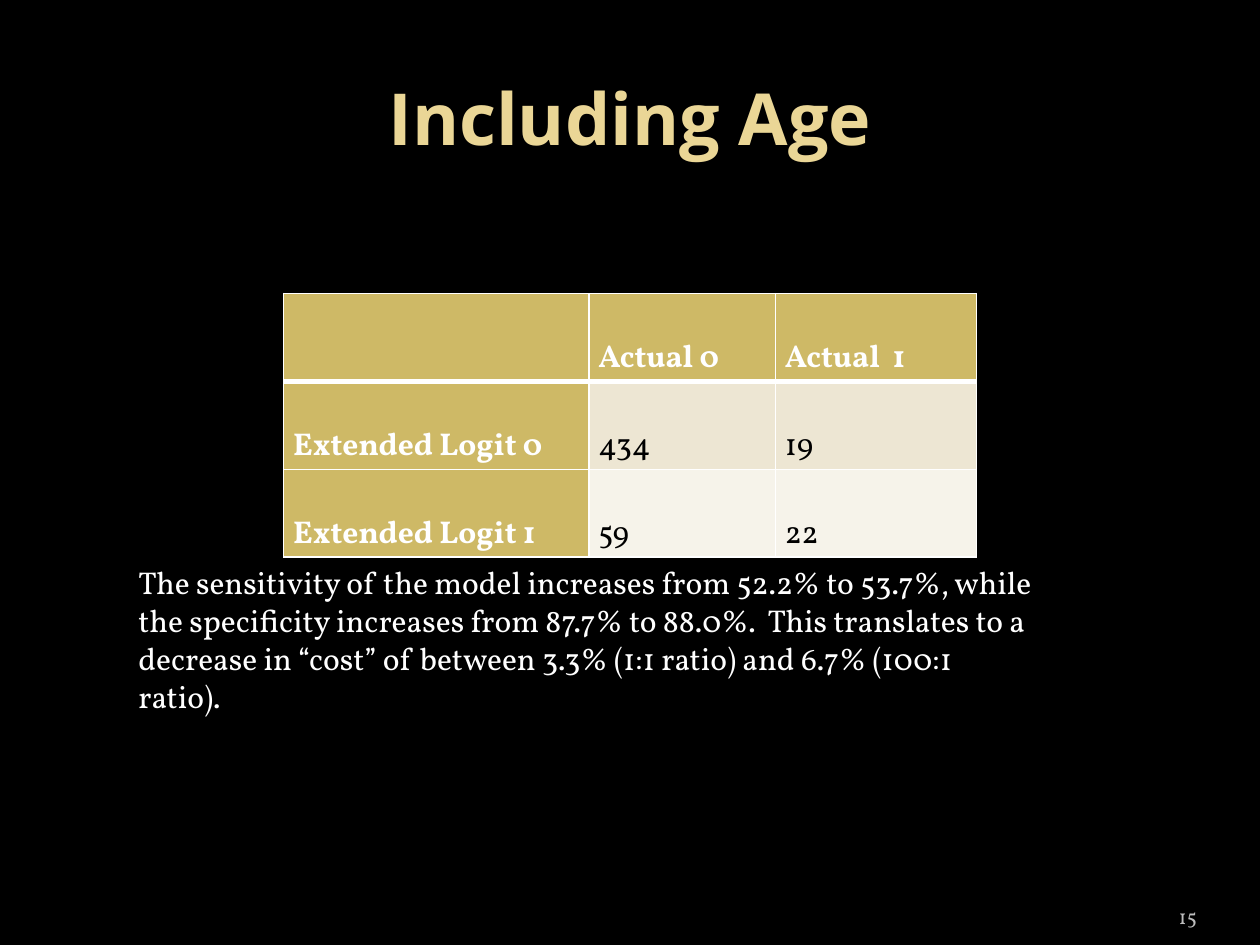
from dataclasses import dataclass

from lxml import etree
from pptx import Presentation
from pptx.dml.color import RGBColor
from pptx.enum.text import MSO_ANCHOR, PP_ALIGN
from pptx.oxml.ns import qn
from pptx.util import Cm, Pt

LEFT, CENTER, RIGHT = PP_ALIGN.LEFT, PP_ALIGN.CENTER, PP_ALIGN.RIGHT
TOP, MIDDLE, BOTTOM = MSO_ANCHOR.TOP, MSO_ANCHOR.MIDDLE, MSO_ANCHOR.BOTTOM
TITLE_ONLY = 5


@dataclass(frozen=True)
class Theme:
    """Colours, fonts and type sizes of the slide."""

    background: str = "000000"
    title: str = "EAD696"
    light: str = "FFFFFF"
    dark: str = "000000"
    number: str = "BDBDBD"
    header: str = "CEB966"
    bands: tuple = ("EDE6D3", "F6F3EA")
    title_font: str = "Open Sans"
    body_font: str = "Vollkorn"
    title_size: int = 41
    body_size: int = 18
    number_size: int = 12
    thin: int = 1
    thick: int = 3


THEME = Theme()
COLUMN_WIDTHS = (6.15, 3.76, 4.06)
ROW_HEIGHT = 1.63
CONFUSION = (
    ("", "Actual 0", "Actual  1"),
    ("Extended Logit 0", "434", "19"),
    ("Extended Logit 1", "59", "22"),
)
FINDING = (
    "The sensitivity of the model increases from 52.2% to 53.7%, while the "
    "specificity increases from 87.7% to 88.0%.  This translates to a decrease in "
    "“cost” of between 3.3% (1:1 ratio) and 6.7% (100:1 ratio)."
)


def format_paragraph(para, color, size, name=THEME.body_font, bold=False, align=LEFT):
    """Set the font and alignment of one paragraph."""
    para.alignment = align
    para.font.name = name
    para.font.size = Pt(size)
    para.font.bold = bold
    para.font.color.rgb = RGBColor.from_string(color)


def add_title(page, text):
    """Place and format the title placeholder."""
    title = page.shapes.title
    title.left, title.top, title.width, title.height = Cm(1.27), Cm(0.76), Cm(22.86), Cm(3.18)
    title.text_frame.text = text
    title.text_frame.vertical_anchor = MIDDLE
    format_paragraph(title.text_frame.paragraphs[0], THEME.title, THEME.title_size,
                     THEME.title_font, bold=True, align=CENTER)


def add_text(page, text, place, color, size, align=LEFT, anchor=TOP, side=0.25):
    """Add a wrapped text box with one paragraph."""
    box = page.shapes.add_textbox(*(Cm(length) for length in place))
    frame = box.text_frame
    frame.word_wrap = True
    frame.vertical_anchor = anchor
    frame.margin_left = frame.margin_right = Cm(side)
    frame.text = text
    format_paragraph(frame.paragraphs[0], color, size, align=align)


def set_borders(cell, widths):
    """Draw the left, right, top and bottom borders of a cell."""
    properties = cell._tc.get_or_add_tcPr()
    for index, (side, width) in enumerate(zip("LRTB", widths)):
        line = etree.Element(qn(f"a:ln{side}"), w=str(Pt(width)))
        fill = etree.SubElement(line, qn("a:solidFill"))
        etree.SubElement(fill, qn("a:srgbClr"), val=THEME.light)
        properties.insert(index, line)


def format_cell(cell, text, row, column):
    """Fill, border and letter a cell according to its place."""
    is_header = row == 0 or column == 0
    fill = THEME.header if is_header else THEME.bands[row - 1]
    cell.fill.solid()
    cell.fill.fore_color.rgb = RGBColor.from_string(fill)
    cell.margin_left = cell.margin_right = Cm(0.19)
    cell.margin_top = cell.margin_bottom = 0
    cell.text = text
    para = cell.text_frame.paragraphs[0]
    para.line_spacing = 2.0
    format_paragraph(para, THEME.light if is_header else THEME.dark,
                     THEME.body_size, bold=is_header)
    above = THEME.thick if row == 1 else THEME.thin
    below = THEME.thick if row == 0 else THEME.thin
    set_borders(cell, (THEME.thin, THEME.thin, above, below))


def add_matrix(page, rows, left, top):
    """Add the table of predicted against actual classes."""
    frame = page.shapes.add_table(len(rows), len(COLUMN_WIDTHS), Cm(left), Cm(top),
                                  Cm(sum(COLUMN_WIDTHS)), Cm(ROW_HEIGHT * len(rows)))
    table = frame.table
    for column, width in zip(table.columns, COLUMN_WIDTHS):
        column.width = Cm(width)
    for row, texts in enumerate(rows):
        for column, text in enumerate(texts):
            format_cell(table.cell(row, column), text, row, column)


def main():
    """Build and save the slide."""
    deck = Presentation()
    deck.slide_width, deck.slide_height = Cm(25.4), Cm(19.05)
    page = deck.slides.add_slide(deck.slide_layouts[TITLE_ONLY])
    page.background.fill.solid()
    page.background.fill.fore_color.rgb = RGBColor.from_string(THEME.background)
    add_title(page, "Including Age")
    add_matrix(page, CONFUSION, 5.72, 5.92)
    add_text(page, FINDING, (2.54, 11.23, 18.62, 2.57), THEME.light, THEME.body_size)
    add_text(page, "15", (22.02, 17.83, 2.11, 1.02), THEME.number, THEME.number_size,
             align=RIGHT, anchor=BOTTOM, side=0)
    deck.save("out.pptx")


if __name__ == "__main__":
    main()
